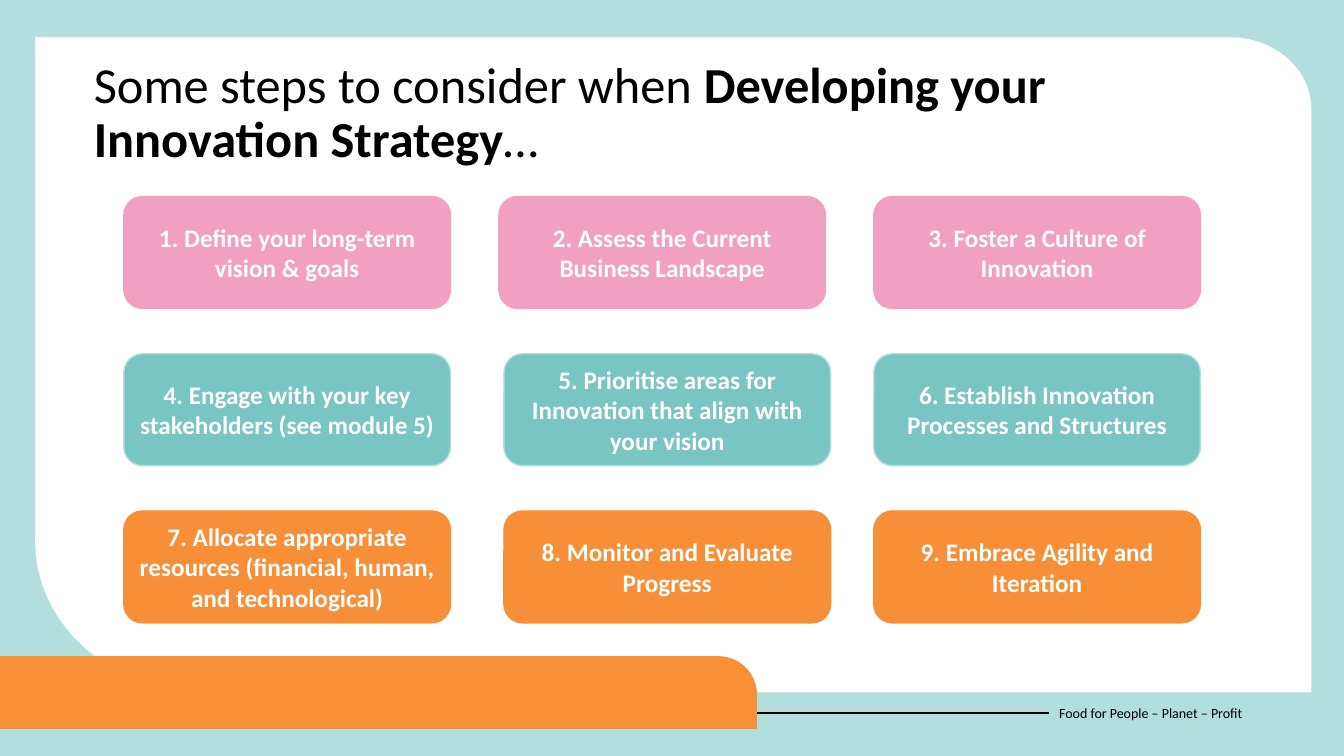
from math import cos, sin, pi

from lxml.etree import SubElement
from pptx import Presentation
from pptx.dml.color import RGBColor
from pptx.enum.shapes import MSO_CONNECTOR as Link, MSO_SHAPE as Kind
from pptx.enum.text import MSO_ANCHOR as Anchor, MSO_AUTO_SIZE as Fit, PP_ALIGN as Align
from pptx.oxml.ns import qn
from pptx.util import Pt

BLACK = RGBColor(0x00, 0x00, 0x00)
WHITE = RGBColor(0xFF, 0xFF, 0xFF)
MINT = RGBColor(0xB2, 0xDE, 0xDD)
TEAL = RGBColor(0x79, 0xC5, 0xC3)
PINK = RGBColor(0xF1, 0xA0, 0xC2)
ORANGE = RGBColor(0xF6, 0x8F, 0x37)
AMBER = RGBColor(0xF7, 0x90, 0x37)

STEPS = [
    (PINK, PINK, ["1. Define your long-term vision & goals",
                  "2. Assess the Current Business Landscape",
                  "3. Foster a Culture of Innovation"]),
    (TEAL, MINT, ["4. Engage with your key stakeholders (see module 5)",
                  "5. Prioritise areas for Innovation that align with your vision",
                  "6. Establish Innovation Processes and Structures"]),
    (ORANGE, ORANGE, ["7. Allocate appropriate resources (financial, human, and technological)",
                      "8. Monitor and Evaluate Progress",
                      "9. Embrace Agility and Iteration"]),
]


def write(para, text, size=18, color=BLACK, bold=False, align=Align.LEFT):
    """Add a run to a paragraph."""
    para.alignment = align
    run = para.add_run()
    run.text = text
    font = run.font
    font.name, font.size, font.bold = "Calibri", Pt(size), bold
    font.color.rgb = color


def arc(x, y, rx, ry, start):
    """Points of a clockwise quarter turn about (x, y), from start degrees."""
    turns = [(start + 5 * i) * pi / 180 for i in range(19)]
    return [(x + rx * cos(t), y + ry * sin(t)) for t in turns]


class Page:
    def __init__(self, slide):
        self.slide = slide
        self.shapes = slide.shapes

    def paint(self, shape, fill, line=None):
        shape.shadow.inherit = False
        shape.fill.solid()
        shape.fill.fore_color.rgb = fill
        if line is None:
            shape.line.fill.background()
        else:
            shape.line.color.rgb = line
            shape.line.width = Pt(1)
        return shape

    def box(self, kind, x, y, w, h, fill, line=None):
        shape = self.shapes.add_shape(kind, Pt(x), Pt(y), Pt(w), Pt(h))
        return self.paint(shape, fill, line)

    def outline(self, points, fill):
        points = [(Pt(x), Pt(y)) for x, y in points]
        pen = self.shapes.build_freeform(*points[0])
        pen.add_line_segments(points[1:], close=True)
        return self.paint(pen.convert_to_shape(), fill)

    def card(self, x, y, w, h, text, fill, line):
        shape = self.box(Kind.ROUNDED_RECTANGLE, x, y, w, h, fill, line)
        frame = shape.text_frame
        frame.word_wrap = True
        frame.vertical_anchor = Anchor.MIDDLE
        write(frame.paragraphs[0], text, color=WHITE, bold=True, align=Align.CENTER)

    def label(self, x, y, w, h, text, size):
        shape = self.shapes.add_textbox(Pt(x), Pt(y), Pt(w), Pt(h))
        frame = shape.text_frame
        frame.word_wrap = True
        frame.vertical_anchor = Anchor.MIDDLE
        write(frame.paragraphs[0], text, size=size)
        return shape

    def rule(self, x, y, target):
        """Draw a line to the left side of the target."""
        line = self.shapes.add_connector(Link.STRAIGHT, Pt(x), Pt(y), target.left, Pt(y))
        line.end_connect(target, 1)
        line.line.color.rgb = BLACK
        line.line.width = Pt(1.5)
        SubElement(line._element.spPr, qn("a:effectLst"))

    def title(self, x, y, w, h, parts):
        shape = self.shapes.title
        shape.left, shape.top, shape.width, shape.height = Pt(x), Pt(y), Pt(w), Pt(h)
        frame = shape.text_frame
        frame.word_wrap = True
        frame.auto_size = Fit.NONE
        frame.vertical_anchor = Anchor.TOP
        para = frame.paragraphs[0]
        para.line_spacing = 0.9
        for text, bold in parts:
            write(para, text, size=36, bold=bold)
        # Bring the title in front of the panel
        self.shapes._spTree.append(shape._element)


def main():
    deck = Presentation()
    deck.slide_width, deck.slide_height = Pt(960), Pt(540)
    page = Page(deck.slides.add_slide(deck.slide_layouts[5]))

    # Backdrop and white panel
    page.box(Kind.RECTANGLE, 0, 0, 960, 540, MINT)
    left, top, right, foot = 25.2, 26.6, 936.7, 494.6
    page.outline([(left, top)] + arc(right - 58.3, top + 51.1, 58.3, 51.1, -90)
                 + [(right, foot)] + arc(left + 122.4, foot - 107.3, 122.4, 107.3, 90),
                 WHITE)

    # Footer
    motto = page.label(749.5, 494.6, 196.6, 28.8, "Food for People – Planet – Profit", 10)
    page.rule(0, 509, motto)
    page.outline([(0, 520.6), (0, 468.7)] + arc(513.2, 496.2, 27.5, 27.5, -90)
                 + [(540.7, 520.6)], AMBER)

    # Title
    page.title(59.8, 38.9, 834.5, 63.4, [
        ("Some steps to consider when ", False),
        ("Developing your Innovation Strategy", True),
        ("…", False)])

    # Grid of steps; the middle card of the first row sits a little to the left
    for row, (fill, line, texts) in enumerate(STEPS):
        middle = 360 if row else 356.4
        for x, text in zip((88.5, middle, 624.2), texts):
            page.card(x, 140.4 + 112.3 * row, 233.3, 79.9, text, fill, line)

    deck.save("out.pptx")


if __name__ == "__main__":
    main()
